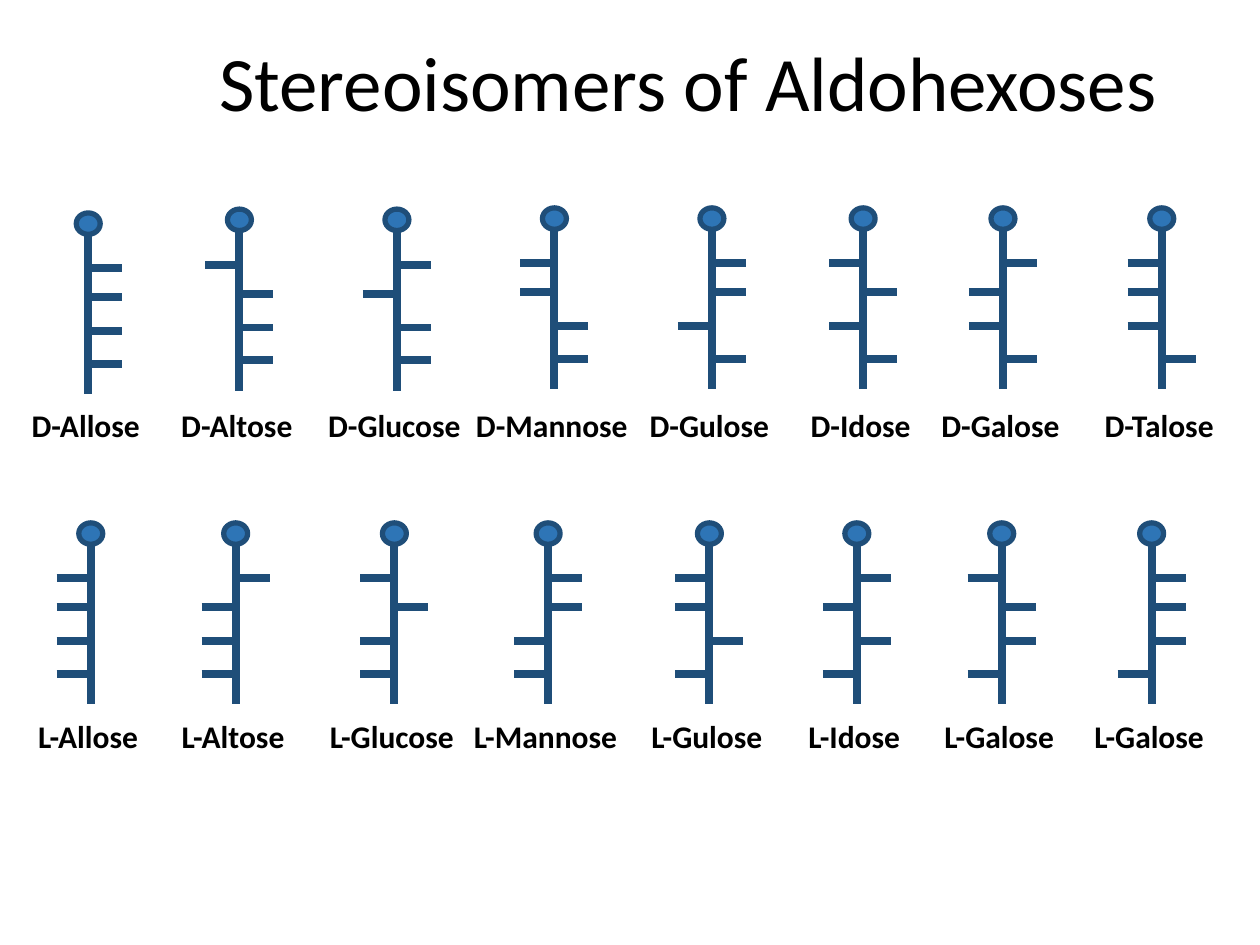
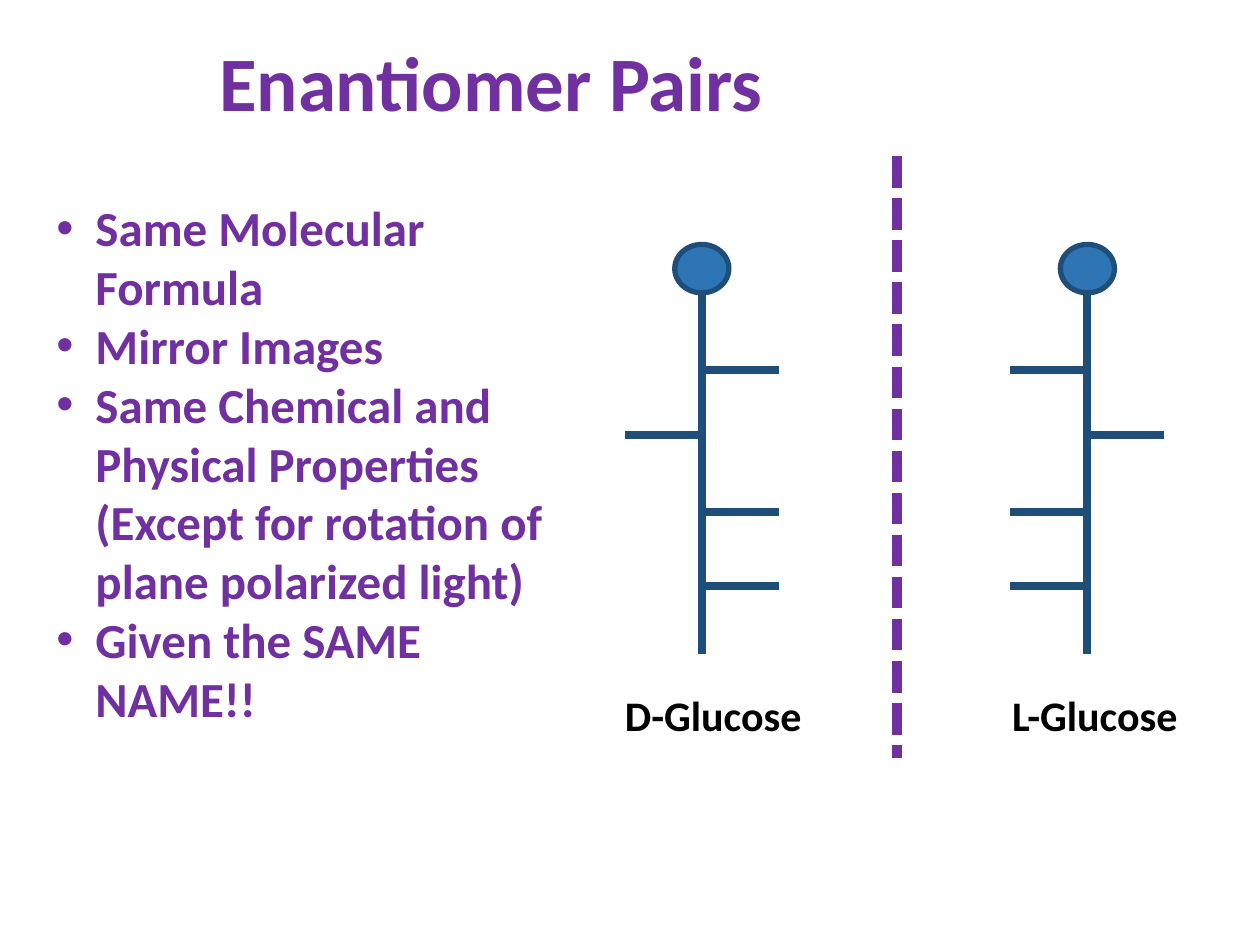
from typing import NamedTuple

from lxml.etree import SubElement
from pptx import Presentation
from pptx.dml.color import RGBColor
from pptx.enum.dml import MSO_LINE
from pptx.enum.shapes import MSO_CONNECTOR, MSO_SHAPE
from pptx.enum.text import MSO_ANCHOR, MSO_AUTO_SIZE, PP_ALIGN
from pptx.oxml.ns import qn
from pptx.util import Inches, Pt

FONT = "Calibri"
BLACK = "000000"
PURPLE = "7030A0"
HEAD_BLUE = "2E75B6"
CHAIN_BLUE = "1F4E79"

TITLE_ONLY = 5
HEAD_WIDTH = 0.19
HEAD_HEIGHT = 0.17
CHAIN_END = 1.44
ARM_LENGTH = 0.27
ARM_OFFSETS = (0.44, 0.67, 0.94, 1.2)
LABEL_SHIFT = -0.02
MIRROR = str.maketrans("LR", "RL")


class Sugar(NamedTuple):
    d_name: str
    l_name: str
    arms: str
    d_center: float
    l_center: float
    d_top: float
    label_width: float


SUGARS = (
    Sugar("D-Allose", "L-Allose", "RRRR", 0.7, 0.72, 1.69, 1.08),
    Sugar("D-Altose", "L-Altose", "LRRR", 1.9, 1.87, 1.66, 1.11),
    Sugar("D-Glucose", "L-Glucose", "RLRR", 3.15, 3.13, 1.66, 1.27),
    Sugar("D-Mannose", "L-Mannose", "LLRR", 4.4, 4.35, 1.65, 1.43),
    Sugar("D-Gulose", "L-Gulose", "RRLR", 5.65, 5.63, 1.65, 1.17),
    Sugar("D-Idose", "L-Idose", "LRLR", 6.85, 6.8, 1.65, 1.01),
    Sugar("D-Galose", "L-Galose", "RLLR", 7.96, 7.95, 1.65, 1.16),
    Sugar("D-Talose", "L-Galose", "LLLR", 9.22, 9.14, 1.65, 1.16),
)

ENANTIOMER_FACTS = (
    "Same Molecular Formula",
    "Mirror Images",
    "Same Chemical and Physical Properties "
    "(Except for rotation of plane polarized light)",
    "Given the SAME NAME!!",
)


def color(value):
    return RGBColor.from_string(value)


def format_font(paragraph, size, font_color, bold=True):
    font = paragraph.font
    font.name = FONT
    font.size = Pt(size)
    font.bold = bold
    font.color.rgb = color(font_color)


def add_titled_slide(presentation, text, font_color, bold):
    slide = presentation.slides.add_slide(presentation.slide_layouts[TITLE_ONLY])
    title = slide.shapes.title
    title.left, title.top = Inches(1.64), Inches(0.26)
    title.width, title.height = Inches(7.89), Inches(0.85)
    frame = title.text_frame
    frame.text = text
    frame.auto_size = MSO_AUTO_SIZE.NONE
    frame.vertical_anchor = MSO_ANCHOR.MIDDLE
    paragraph = frame.paragraphs[0]
    paragraph.alignment = PP_ALIGN.LEFT
    paragraph.line_spacing = 0.9
    format_font(paragraph, 44, font_color, bold)
    return slide


def add_line(shapes, start, end, line_color, width):
    connector = shapes.add_connector(
        MSO_CONNECTOR.STRAIGHT, *map(Inches, start + end)
    )
    connector.line.color.rgb = color(line_color)
    connector.line.width = Pt(width)
    SubElement(connector._element.spPr, qn("a:effectLst"))
    return connector


def add_molecule(slide, center, top, arms, scale=1):
    shapes = slide.shapes.add_group_shape().shapes
    width, height = HEAD_WIDTH * scale, HEAD_HEIGHT * scale
    head = shapes.add_shape(
        MSO_SHAPE.OVAL,
        Inches(center - width / 2), Inches(top), Inches(width), Inches(height),
    )
    head.shadow.inherit = False
    head.fill.solid()
    head.fill.fore_color.rgb = color(HEAD_BLUE)
    head.line.color.rgb = color(CHAIN_BLUE)
    head.line.width = Pt(3)
    chain_end = top + CHAIN_END * scale
    add_line(shapes, (center, top + height), (center, chain_end), CHAIN_BLUE, 4.5)
    for side, offset in zip(arms, ARM_OFFSETS):
        y = top + offset * scale
        reach = ARM_LENGTH * scale * (1 if side == "R" else -1)
        left, right = sorted((center, center + reach))
        add_line(shapes, (left, y), (right, y), CHAIN_BLUE, 4.5)


def add_label(slide, text, center, top, width, height, size):
    box = slide.shapes.add_textbox(
        Inches(center - width / 2), Inches(top), Inches(width), Inches(height)
    )
    frame = box.text_frame
    frame.word_wrap = False
    frame.text = text
    paragraph = frame.paragraphs[0]
    paragraph.alignment = PP_ALIGN.CENTER
    format_font(paragraph, size, BLACK)


def add_bullets(slide, items):
    box = slide.shapes.add_textbox(
        Inches(0.35), Inches(1.52), Inches(4.1), Inches(5.28)
    )
    frame = box.text_frame
    frame.word_wrap = True
    for index, item in enumerate(items):
        paragraph = frame.add_paragraph() if index else frame.paragraphs[0]
        paragraph.text = item
        properties = paragraph._p.get_or_add_pPr()
        properties.set("marL", str(Inches(0.31)))
        properties.set("indent", str(-Inches(0.31)))
        SubElement(properties, qn("a:buFont"), typeface="Arial")
        SubElement(properties, qn("a:buChar"), char="•")
        format_font(paragraph, 28, PURPLE)


def build_stereoisomers(presentation):
    slide = add_titled_slide(
        presentation, "Stereoisomers of Aldohexoses", BLACK, False
    )
    for sugar in SUGARS:
        mirrored = sugar.arms.translate(MIRROR)
        rows = (
            (sugar.d_name, sugar.d_center, sugar.d_top, sugar.arms, 3.17),
            (sugar.l_name, sugar.l_center, 4.15, mirrored, 5.64),
        )
        for name, center, top, arms, label_top in rows:
            add_molecule(slide, center, top, arms)
            add_label(
                slide, name, center + LABEL_SHIFT, label_top,
                sugar.label_width, 0.4, 18,
            )


def build_enantiomers(presentation):
    slide = add_titled_slide(presentation, "Enantiomer Pairs", PURPLE, True)
    glucose = SUGARS[2]
    pair = (
        (glucose.d_name, 5.57, 5.66, glucose.arms),
        (glucose.l_name, 8.63, 8.69, glucose.arms.translate(MIRROR)),
    )
    for name, center, label_center, arms in pair:
        add_molecule(slide, center, 1.94, arms, scale=2.26)
        add_label(slide, name, label_center, 5.42, 1.62, 0.5, 24)
    mirror_line = add_line(slide.shapes, (7.12, 1.24), (7.12, 6.02), PURPLE, 6)
    mirror_line.line.dash_style = MSO_LINE.SQUARE_DOT
    add_bullets(slide, ENANTIOMER_FACTS)


def main():
    presentation = Presentation()
    presentation.slide_width = Inches(10)
    presentation.slide_height = Inches(7.5)
    build_stereoisomers(presentation)
    build_enantiomers(presentation)
    presentation.save("out.pptx")


if __name__ == "__main__":
    main()
